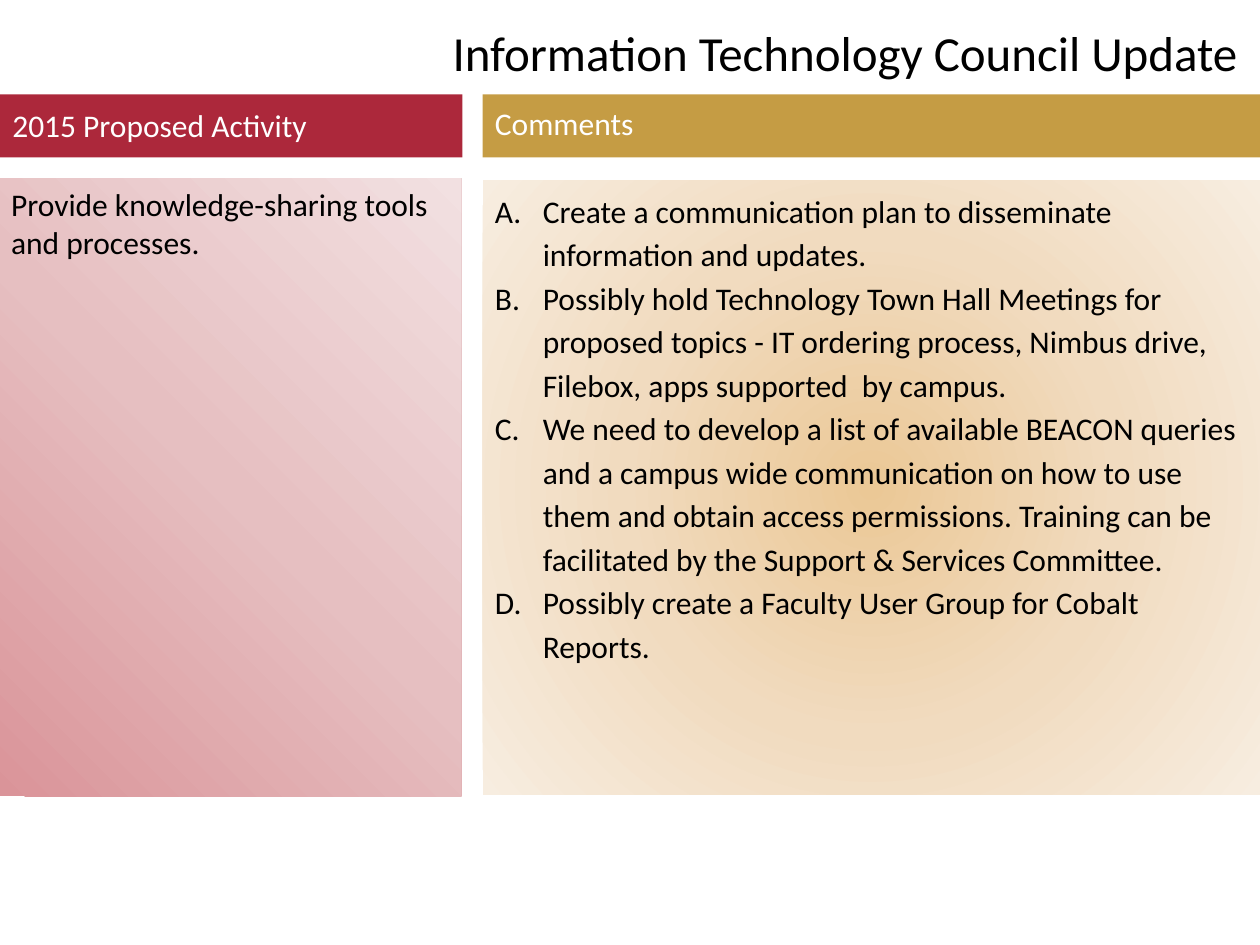
from lxml import etree
from pptx import Presentation
from pptx.dml.color import RGBColor
from pptx.enum.shapes import MSO_SHAPE
from pptx.enum.text import MSO_ANCHOR, PP_ALIGN
from pptx.oxml import parse_xml
from pptx.oxml.ns import nsdecls, qn
from pptx.util import Inches, Pt

RECTANGLE = MSO_SHAPE.RECTANGLE
TOP = MSO_ANCHOR.TOP
LEFT, RIGHT = PP_ALIGN.LEFT, PP_ALIGN.RIGHT

COLORS = {
    "gold": "C59C44",
    "red": "AC283B",
    "black": "000000",
    "white": "FFFFFF",
}
RED_STOPS = ["DA9499", "E6BFC1", "F2E0E1"]
GOLD_STOPS = ["EBC896", "F1DBBF", "F7EDE0"]
LINEAR = '<a:lin ang="18900000" scaled="0"/>'
RADIAL = '<a:path path="circle"><a:fillToRect l="50000" t="50000" r="50000" b="50000"/></a:path>'


def add_rectangle(page, left, top, width, height):
    box = page.shapes.add_shape(
        RECTANGLE, Inches(left), Inches(top), Inches(width), Inches(height)
    )
    box.shadow.inherit = False
    box.line.fill.background()
    return box


def add_text(para, text, size, color, align=LEFT):
    para.alignment = align
    span = para.add_run()
    span.text = text
    span.font.name = "Calibri"
    span.font.size = Pt(size)
    span.font.color.rgb = RGBColor.from_string(COLORS[color])


deck = Presentation()
deck.slide_width = Inches(10)
deck.slide_height = Inches(7.5)
page = deck.slides.add_slide(deck.slide_layouts[6])

for left, width, color in [(3.83, 6.17, "gold"), (0, 3.67, "red")]:
    header = add_rectangle(page, left, 0.75, width, 0.5)
    header.fill.solid()
    header.fill.fore_color.rgb = RGBColor.from_string(COLORS[color])

labels = [
    ("Information Technology Council Update", 2.81, 0.13, 7.11, 0.57, 28, "black", RIGHT),
    ("2015 Proposed Activity", 0, 0.79, 2.56, 0.4, 18, "white", LEFT),
    ("Comments", 3.83, 0.78, 1.31, 0.4, 18, "white", LEFT),
]
for text, left, top, width, height, size, color, align in labels:
    box = page.shapes.add_textbox(Inches(left), Inches(top), Inches(width), Inches(height))
    box.text_frame.word_wrap = False
    add_text(box.text_frame.paragraphs[0], text, size, color, align)

activity = add_rectangle(page, -0.01, 1.42, 3.67, 4.9)
comments = add_rectangle(page, 3.83, 1.43, 6.17, 4.88)
for panel, stops, direction in [
    (activity, RED_STOPS, LINEAR),
    (comments, GOLD_STOPS, RADIAL),
]:
    stop_xml = "".join(
        f'<a:gs pos="{index * 50000}"><a:srgbClr val="{color}"/></a:gs>'
        for index, color in enumerate(stops)
    )
    gradient = parse_xml(
        f'<a:gradFill {nsdecls("a")} rotWithShape="1">'
        f"<a:gsLst>{stop_xml}</a:gsLst>{direction}</a:gradFill>"
    )
    panel.element.spPr.find(qn("a:prstGeom")).addnext(gradient)
    panel.text_frame.word_wrap = True
    panel.text_frame.vertical_anchor = TOP

add_text(
    activity.text_frame.paragraphs[0],
    "Provide knowledge-sharing tools and processes.",
    18,
    "black",
)

comment_items = [
    "Create a communication plan to disseminate information and updates.",
    "Possibly hold Technology Town Hall Meetings for proposed topics - IT ordering process, "
    "Nimbus drive, Filebox, apps supported  by campus.",
    "We need to develop a list of available BEACON queries and a campus wide communication "
    "on how to use them and obtain access permissions. Training can be facilitated by the "
    "Support & Services Committee.",
    "Possibly create a Faculty User Group for Cobalt Reports.",
]
frame = comments.text_frame
for index, text in enumerate(comment_items):
    para = frame.add_paragraph() if index else frame.paragraphs[0]
    add_text(para, text, 18, "black")
    para.line_spacing = 1.15
    properties = para._p.get_or_add_pPr()
    properties.set("marL", str(Inches(0.38)))
    properties.set("indent", str(Inches(-0.38)))
    etree.SubElement(properties, qn("a:buFont"), typeface="+mj-lt")
    etree.SubElement(properties, qn("a:buAutoNum"), type="alphaUcPeriod")
para.space_after = Pt(10)

deck.save("out.pptx")
